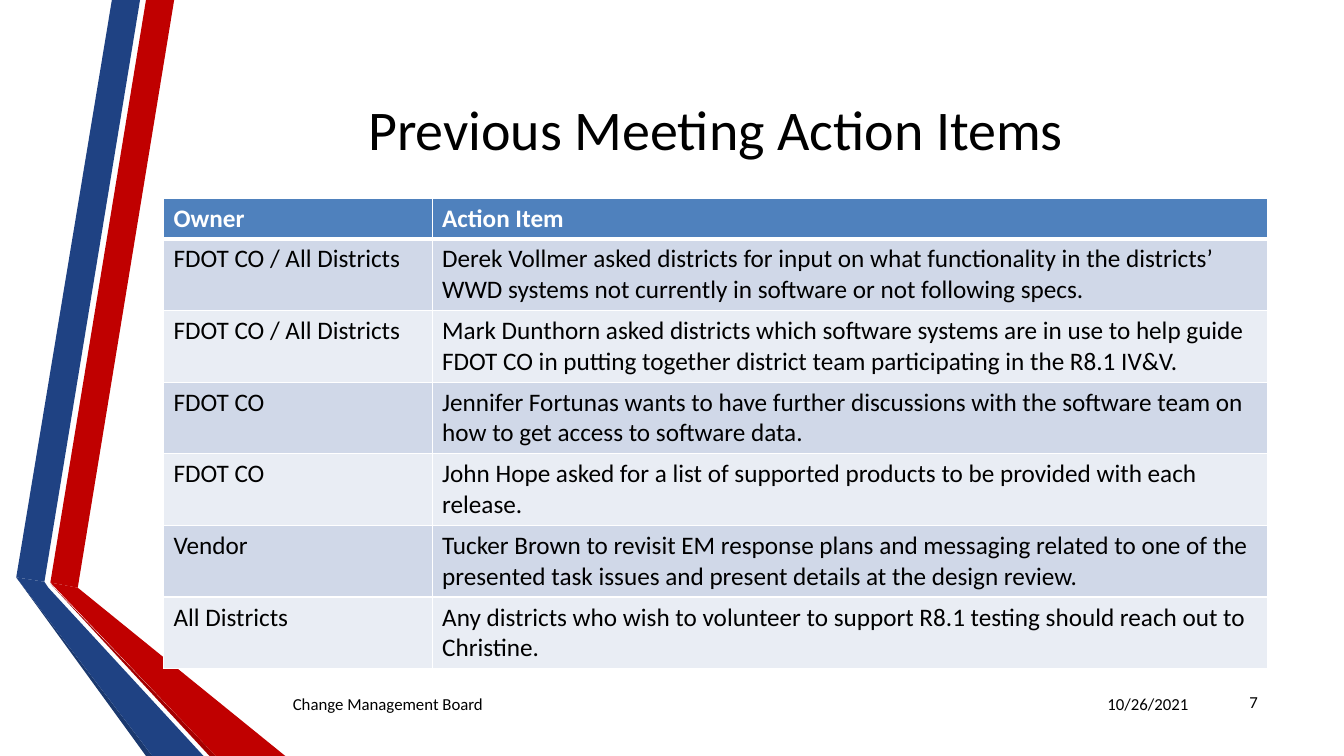
from lxml.etree import SubElement
from pptx import Presentation
from pptx.dml.color import RGBColor
from pptx.enum.text import MSO_ANCHOR, PP_ALIGN
from pptx.oxml.ns import qn
from pptx.util import Cm, Pt

COLORS = {
    "blue": "1F4283",
    "dark_blue": "1B396F",
    "red": "C00000",
    "dark_red": "A40000",
    "header": "4F81BD",
    "odd_row": "D0D8E8",
    "even_row": "E9EDF4",
    "white": "FFFFFF",
    "black": "000000",
}
FONT = "Calibri"

RIBBON_PIECES = [
    ("red", [(1.27, 14.68), (1.96, 14.81), (4.39, 0), (3.68, 0)]),
    ("blue", [(3.53, 0), (2.82, 0), (0.41, 14.55), (1.12, 14.66)]),
    ("dark_blue", [(0.41, 14.55), (3.68, 19.05), (3.84, 19.05)]),
    ("dark_red", [(1.27, 14.71), (5.28, 19.05), (5.44, 19.05)]),
    ("red", [(1.27, 14.68), (5.44, 19.05), (7.19, 19.05), (1.96, 14.81)]),
    ("blue", [(5.13, 19.05), (1.22, 14.81), (1.12, 14.66), (0.41, 14.55), (3.84, 19.05)]),
]

ACTION_ITEMS = [
    ("Owner", "Action Item"),
    ("FDOT CO / All Districts",
     "Derek Vollmer asked districts for input on what functionality in the districts’ "
     "WWD systems not currently in software or not following specs."),
    ("FDOT CO / All Districts",
     "Mark Dunthorn asked districts which software systems are in use to help guide "
     "FDOT CO in putting together district team participating in the R8.1 IV&V."),
    ("FDOT CO",
     "Jennifer Fortunas wants to have further discussions with the software team on "
     "how to get access to software data."),
    ("FDOT CO",
     "John Hope asked for a list of supported products to be provided with each release."),
    ("Vendor",
     "Tucker Brown to revisit EM response plans and messaging related to one of the "
     "presented task issues and present details at the design review."),
    ("All Districts",
     "Any districts who wish to volunteer to support R8.1 testing should reach out to "
     "Christine."),
]


def color(name):
    """Return the named colour."""
    return RGBColor.from_string(COLORS[name])


def write(paragraph, text, size, color_name="black", bold=False):
    """Add one formatted run to a paragraph."""
    run = paragraph.add_run()
    run.text = text
    run.font.name = FONT
    run.font.size = Pt(size)
    run.font.bold = bold
    run.font.color.rgb = color(color_name)


def add_label(slide, box, text, size, alignment):
    """Add a vertically centred line of text in the box."""
    frame = slide.shapes.add_textbox(*map(Cm, box)).text_frame
    frame.word_wrap = True
    frame.vertical_anchor = MSO_ANCHOR.MIDDLE
    paragraph = frame.paragraphs[0]
    paragraph.alignment = alignment
    write(paragraph, text, size)


def add_ribbons(slide, left, top):
    """Draw the folded blue and red ribbons from the given corner."""
    for color_name, points in RIBBON_PIECES:
        corners = [(Cm(left + x), Cm(top + y)) for x, y in points]
        builder = slide.shapes.build_freeform(*corners[0])
        builder.add_line_segments(corners[1:], close=True)
        shape = builder.convert_to_shape()
        shape.shadow.inherit = False
        shape.fill.solid()
        shape.fill.fore_color.rgb = color(color_name)
        shape.line.fill.background()


def style_cell(cell, fill_name, top_width, bottom_width):
    """Give a cell white borders and a solid fill."""
    properties = cell._tc.get_or_add_tcPr()
    widths = {"a:lnL": 1, "a:lnR": 1, "a:lnT": top_width, "a:lnB": bottom_width}
    for tag, width in widths.items():
        border = SubElement(properties, qn(tag), w=str(Pt(width)))
        fill = SubElement(border, qn("a:solidFill"))
        SubElement(fill, qn("a:srgbClr"), val=COLORS["white"])
    cell.fill.solid()
    cell.fill.fore_color.rgb = color(fill_name)


def add_action_table(slide, box, owner_width=6.77, header_height=1.03):
    """Fill the box with the table of owners and action items."""
    left, top, width, height = box
    row_count = len(ACTION_ITEMS)
    table = slide.shapes.add_table(row_count, 2, *map(Cm, box)).table
    table.columns[0].width = Cm(owner_width)
    table.columns[1].width = Cm(width - owner_width)
    item_height = (height - header_height) / (row_count - 1)
    for row_index, texts in enumerate(ACTION_ITEMS):
        is_header = row_index == 0
        table.rows[row_index].height = Cm(header_height if is_header else item_height)
        band = "odd_row" if row_index % 2 else "even_row"
        for column_index, text in enumerate(texts):
            cell = table.cell(row_index, column_index)
            style_cell(cell, "header" if is_header else band,
                       3 if row_index == 1 else 1, 3 if is_header else 1)
            write(cell.text_frame.paragraphs[0], text, 18,
                  "white" if is_header else "black", is_header)


def add_footer(slide, box):
    """Place the meeting name, date and page number along the box."""
    left, top, width, height = box
    add_label(slide, (left + width - 4.93, top, 3.18, height), "10/26/2021", 12, PP_ALIGN.RIGHT)
    add_label(slide, (left, top, 19.68, height), "Change Management Board", 12, PP_ALIGN.LEFT)
    add_label(slide, (left + width - 1.52, top - 0.05, 1.52, height), "7", 12, PP_ALIGN.RIGHT)


def main():
    """Build and save the action item slide."""
    presentation = Presentation()
    presentation.slide_width = Cm(33.87)
    presentation.slide_height = Cm(19.05)
    slide = presentation.slides.add_slide(presentation.slide_layouts[6])
    add_ribbons(slide, 0, 0)
    add_label(slide, (4.12, 1.9, 27.83, 2.65), "Previous Meeting Action Items", 40, PP_ALIGN.CENTER)
    add_action_table(slide, (4.12, 4.99, 27.83, 11.86))
    add_footer(slide, (7.13, 17.22, 24.82, 1.02))
    presentation.save("out.pptx")


if __name__ == "__main__":
    main()
